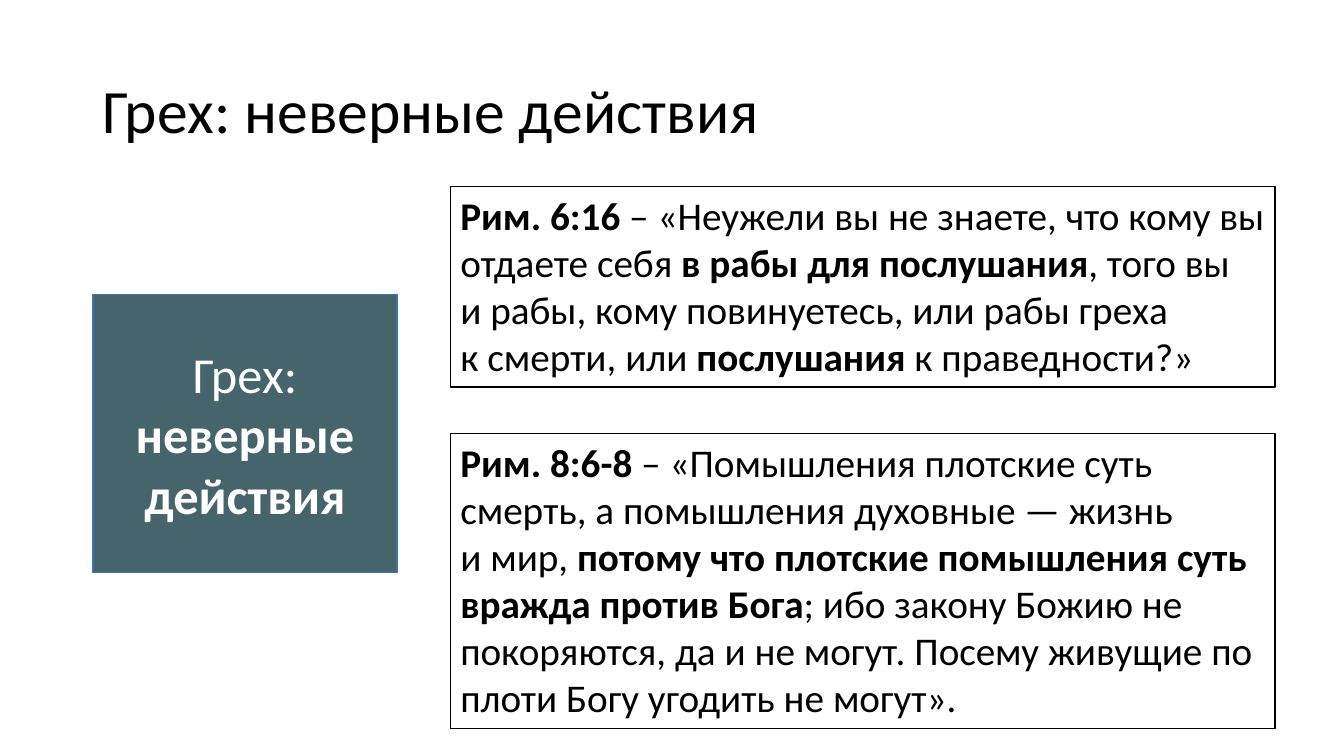
import pptx
import pptx.dml.color
import pptx.enum.shapes
import pptx.enum.text
import pptx.util

Cm = pptx.util.Cm
Pt = pptx.util.Pt
Align = pptx.enum.text.PP_ALIGN
Anchor = pptx.enum.text.MSO_ANCHOR
NO_BREAK_SPACE = chr(160)


def color(value):
    return pptx.dml.color.RGBColor.from_string(value)


def write_text(shape, text, *, size, font, ink, align=Align.LEFT,
               anchor=Anchor.TOP, line_spacing=1.0):
    """Write one paragraph: *bold* between asterisks, ~ for a no-break space."""
    frame = shape.text_frame
    frame.word_wrap = True
    frame.vertical_anchor = anchor
    paragraph = frame.paragraphs[0]
    paragraph.alignment = align
    paragraph.line_spacing = line_spacing
    for index, part in enumerate(text.replace("~", NO_BREAK_SPACE).split("*")):
        if part:
            run = paragraph.add_run()
            run.text = part
            run.font.name = font
            run.font.size = Pt(size)
            run.font.bold = index % 2 == 1
            run.font.color.rgb = color(ink)


class VerseSlide:
    font = "Calibri"
    black = "000000"
    white = "FFFFFF"
    teal = "45646B"
    blue = "43739E"

    def __init__(self, presentation):
        self.slide = presentation.slides.add_slide(presentation.slide_layouts[6])

    def title(self, text, left, top, width, height):
        shape = self.slide.shapes.add_textbox(Cm(left), Cm(top), Cm(width), Cm(height))
        write_text(shape, text, size=44, font=self.font, ink=self.black,
                   anchor=Anchor.MIDDLE, line_spacing=0.9)

    def rectangle(self, left, top, width, height, fill, line):
        shape = self.slide.shapes.add_shape(
            pptx.enum.shapes.MSO_SHAPE.RECTANGLE,
            Cm(left), Cm(top), Cm(width), Cm(height))
        shape.shadow.inherit = False
        shape.fill.solid()
        shape.fill.fore_color.rgb = color(fill)
        shape.line.color.rgb = color(line)
        shape.line.width = Pt(1)
        return shape

    def topic(self, text, left, top, width, height):
        shape = self.rectangle(left, top, width, height, self.teal, self.blue)
        write_text(shape, text, size=36, font=self.font, ink=self.white,
                   align=Align.CENTER, anchor=Anchor.MIDDLE)

    def verse(self, text, top, height):
        shape = self.rectangle(11.35, top, 20.78, height, self.white, self.black)
        write_text(shape, text, size=28, font=self.font, ink=self.black)


def main():
    presentation = pptx.Presentation()
    presentation.slide_width = Cm(33.87)
    presentation.slide_height = Cm(19.05)
    page = VerseSlide(presentation)

    # Title and topic
    page.title("Грех: неверные действия", 2.34, 1.02, 29.21, 3.68)
    page.topic("Грех: *неверные действия*", 2.34, 7.42, 7.67, 7.01)

    # Bible verses
    page.verse("*Рим. 6:16* – «Неужели вы не знаете, что кому вы отдаете себя "
               "*в~рабы для послушания*, того вы и~рабы, кому повинуетесь, "
               "или рабы греха к~смерти, или *послушания* к~праведности?»",
               4.7, 5.05)
    page.verse("*Рим. 8:6-8* – «Помышления плотские суть смерть, "
               "а~помышления духовные — жизнь и~мир, "
               "*потому что плотские помышления суть вражда против Бога*; "
               "ибо закону Божию не покоряются, да и~не могут. "
               "Посему живущие по плоти Богу угодить не могут».",
               10.92, 7.44)

    presentation.save("out.pptx")


if __name__ == "__main__":
    main()
